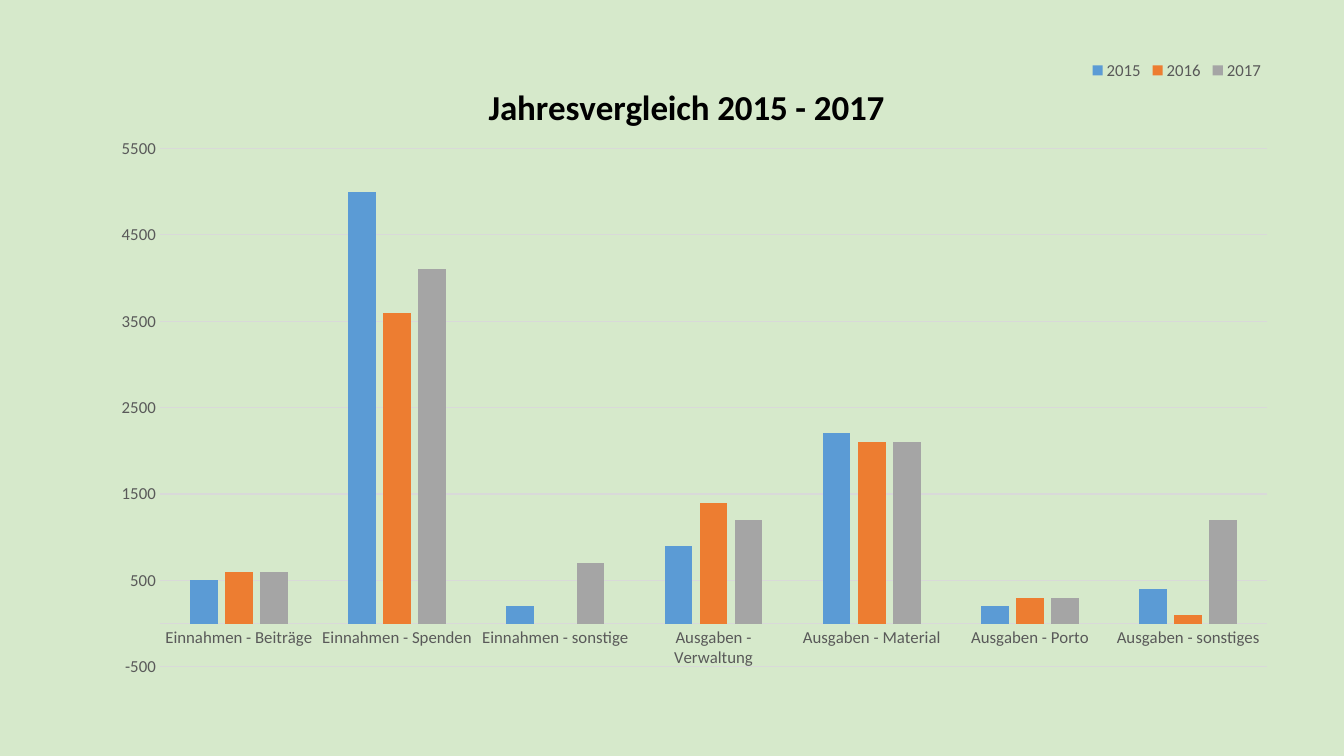
import pptx
import pptx.chart.data
import pptx.dml.color
import pptx.enum.chart
import pptx.oxml
import pptx.oxml.ns
import pptx.util

BACKGROUND = pptx.dml.color.RGBColor(0xD6, 0xE9, 0xCB)
BLACK = pptx.dml.color.RGBColor(0x00, 0x00, 0x00)
LABEL_GREY = pptx.dml.color.RGBColor(0x59, 0x59, 0x59)
GRID_GREY = pptx.dml.color.RGBColor(0xD9, 0xD9, 0xD9)
BLUE = pptx.dml.color.RGBColor(0x5B, 0x9B, 0xD5)
ORANGE = pptx.dml.color.RGBColor(0xED, 0x7D, 0x31)
GREY = pptx.dml.color.RGBColor(0xA5, 0xA5, 0xA5)

FONT = "Calibri"
CATEGORIES = [
    "Einnahmen - Beiträge",
    "Einnahmen - Spenden",
    "Einnahmen - sonstige",
    "Ausgaben - Verwaltung",
    "Ausgaben - Material",
    "Ausgaben - Porto",
    "Ausgaben - sonstiges",
]
YEARS = [
    ("2015", BLUE, [500, 5000, 200, 900, 2200, 200, 400]),
    ("2016", ORANGE, [600, 3600, None, 1400, 2100, 300, 100]),
    ("2017", GREY, [600, 4100, 700, 1200, 2100, 300, 1200]),
]


def style_font(font, size, color, bold=False):
    font.name = FONT
    font.size = pptx.util.Pt(size)
    font.bold = bold
    font.color.rgb = color


def place_part(part, following, shares, target=None):
    for previous in part.xpath("c:layout"):
        part.remove(previous)
    settings = [("layoutTarget", target)] if target else []
    settings += [("xMode", "edge"), ("yMode", "edge")]
    settings += list(zip(("x", "y", "w", "h"), shares))
    content = "".join(f'<c:{tag} val="{value}"/>' for tag, value in settings)
    layout = pptx.oxml.parse_xml(
        f'<c:layout {pptx.oxml.ns.nsdecls("c")}>'
        f"<c:manualLayout>{content}</c:manualLayout></c:layout>"
    )
    part.xpath(following)[0].addprevious(layout)


presentation = pptx.Presentation()
presentation.slide_width = pptx.util.Inches(13.33)
presentation.slide_height = pptx.util.Inches(7.5)
slide = presentation.slides.add_slide(presentation.slide_layouts[6])
slide.background.fill.solid()
slide.background.fill.fore_color.rgb = BACKGROUND

comparison_data = pptx.chart.data.CategoryChartData()
comparison_data.categories = CATEGORIES
for year, color, amounts in YEARS:
    comparison_data.add_series(year, amounts)

comparison = slide.shapes.add_chart(
    pptx.enum.chart.XL_CHART_TYPE.COLUMN_CLUSTERED,
    pptx.util.Inches(0.83),
    pptx.util.Inches(0.42),
    pptx.util.Inches(11.98),
    pptx.util.Inches(6.97),
    comparison_data,
).chart
style_font(comparison.font, 10, BLACK)

bars = comparison.plots[0]
bars.gap_width = 219
bars.overlap = -27
bars.vary_by_categories = False
for year_bars, (year, color, amounts) in zip(bars.series, YEARS):
    year_bars.format.fill.solid()
    year_bars.format.fill.fore_color.rgb = color
    year_bars.invert_if_negative = False

headline = comparison.chart_title
headline.include_in_layout = False
headline_run = headline.text_frame.paragraphs[0].add_run()
headline_run.text = "Jahresvergleich 2015 - 2017"
style_font(headline_run.font, 25, BLACK, bold=True)

comparison.has_legend = True
year_key = comparison.legend
year_key.position = pptx.enum.chart.XL_LEGEND_POSITION.BOTTOM
year_key.include_in_layout = False
style_font(year_key.font, 12, LABEL_GREY)

topics = comparison.category_axis
amount_scale = comparison.value_axis
for axis in (topics, amount_scale):
    axis.major_tick_mark = pptx.enum.chart.XL_TICK_MARK.NONE
    axis.minor_tick_mark = pptx.enum.chart.XL_TICK_MARK.NONE
    style_font(axis.tick_labels.font, 12, LABEL_GREY)

amount_scale.minimum_scale = -500
amount_scale.maximum_scale = 5500
amount_scale.major_unit = 1000
amount_scale.has_major_gridlines = True
amount_scale.format.line.fill.background()
for line in (topics.format.line, amount_scale.major_gridlines.format.line):
    line.color.rgb = GRID_GREY
    line.width = pptx.util.Pt(0.75)

chart_root = comparison.element if hasattr(comparison, "element") else comparison._chartSpace
place_part(chart_root.xpath("c:chart/c:title")[0], "c:overlay", (0.33, 0.05))
place_part(chart_root.xpath("c:chart/c:legend")[0], "c:overlay", (0.83, 0.02, 0.15, 0.04))
place_part(chart_root.xpath("c:chart/c:plotArea")[0], "*[1]", (0.063, 0.151, 0.917, 0.738), "inner")

presentation.save("out.pptx")
